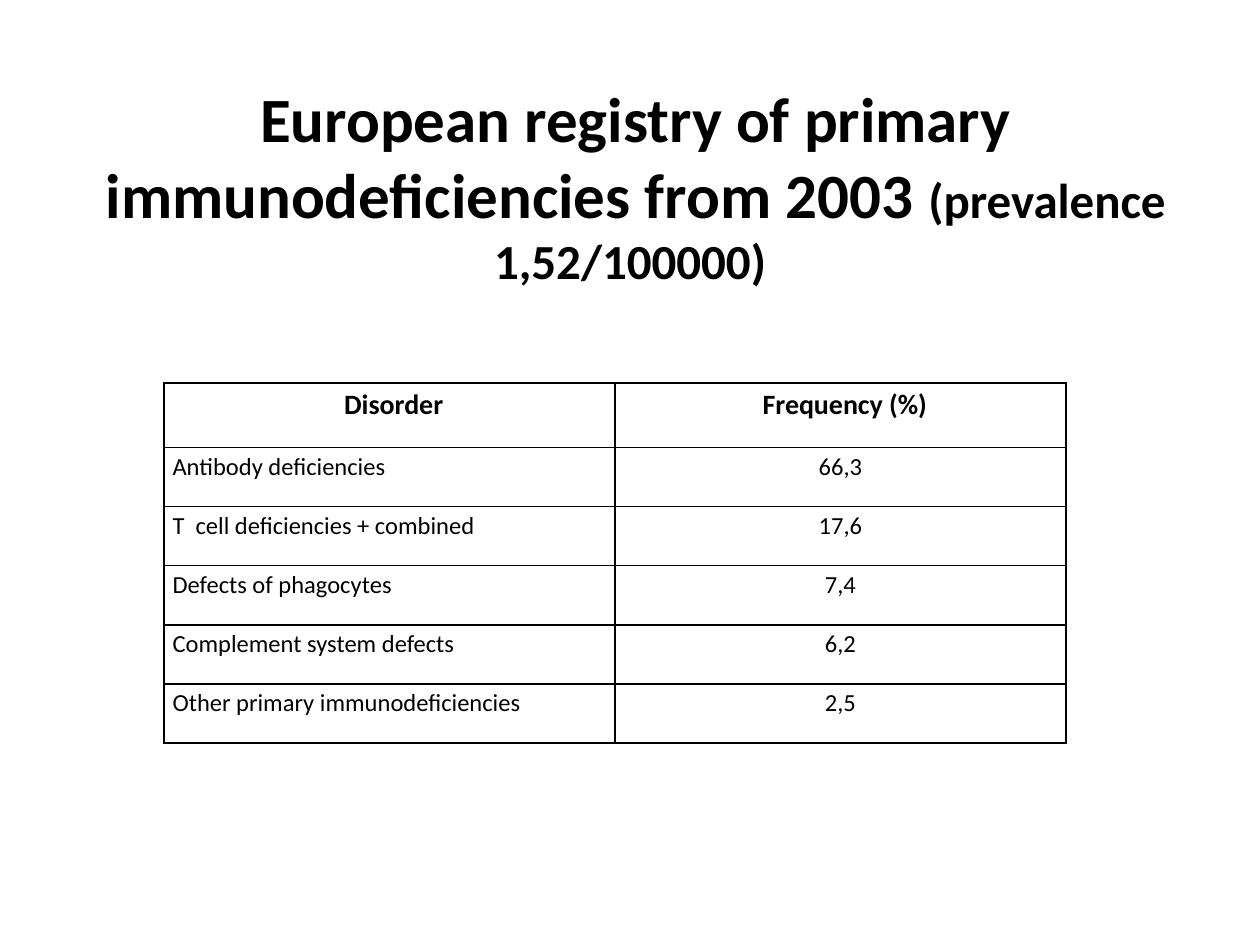
import pptx
import pptx.dml.color
import pptx.enum.dml
import pptx.enum.text
import pptx.oxml
import pptx.oxml.ns
import pptx.util

Inches = pptx.util.Inches
Pt = pptx.util.Pt
Align = pptx.enum.text.PP_ALIGN
Anchor = pptx.enum.text.MSO_ANCHOR

BLACK = pptx.dml.color.RGBColor(0x00, 0x00, 0x00)
WHITE = pptx.dml.color.RGBColor(0xFF, 0xFF, 0xFF)

TITLE_SPANS = [
    ("European registry of primary immunodeficiencies from 2003 ", 36),
    ("(prevalence 1,52/100000) ", 28),
]
HEADINGS = ("Disorder", "Frequency (%)")
DISORDERS = [
    ("Antibody deficiencies", "66,3"),
    ("T  cell deficiencies + combined", "17,6"),
    ("Defects of phagocytes", "7,4"),
    ("Complement system defects", "6,2"),
    ("Other primary immunodeficiencies", "2,5"),
]


class RegistrySlide:
    """Holds the text style and the page that is being filled."""

    font = "Calibri"
    color = BLACK
    border_width = Pt(1)

    def __init__(self, deck):
        self.page = deck.slides.add_slide(deck.slide_layouts[5])
        self.page.background.fill.solid()
        self.page.background.fill.fore_color.rgb = WHITE

    def add_span(self, para, text, size, bold):
        span = para.add_run()
        span.text = text
        span.font.name = self.font
        span.font.size = Pt(size)
        span.font.bold = bold
        span.font.color.rgb = self.color

    def set_title(self, spans, left, top, width, height):
        box = self.page.shapes.title
        box.left, box.top, box.width, box.height = left, top, width, height
        frame = box.text_frame
        frame.word_wrap = True
        frame.auto_size = pptx.enum.text.MSO_AUTO_SIZE.NONE
        frame.vertical_anchor = Anchor.MIDDLE
        para = frame.paragraphs[0]
        para.alignment = Align.CENTER
        for text, size in spans:
            self.add_span(para, text, size, bold=True)

    def add_table(self, rows, left, top, column_width, heights):
        columns = len(rows[0])
        table = self.page.shapes.add_table(
            len(rows), columns, left, top, column_width * columns, sum(heights)
        ).table
        table.horz_banding = False
        for column in table.columns:
            column.width = column_width
        for row_index, texts in enumerate(rows):
            table.rows[row_index].height = heights[row_index]
            for column_index, text in enumerate(texts):
                self.fill_cell(
                    table.cell(row_index, column_index), text,
                    heading=row_index == 0, centered=row_index == 0 or column_index > 0,
                )

    def fill_cell(self, cell, text, heading, centered):
        cell.margin_left = cell.margin_right = Inches(0.05 if heading else 0.07)
        cell.margin_top = cell.margin_bottom = 0
        cell.vertical_anchor = Anchor.TOP
        para = cell.text_frame.paragraphs[0]
        para.alignment = Align.CENTER if centered else Align.LEFT
        para.line_spacing = 1.15
        para.space_after = Pt(10)
        if heading:
            properties = para._p.get_or_add_pPr()
            properties.set("marL", str(Inches(0.07)))
            properties.set("indent", "0")
        self.add_span(para, text, 16 if heading else 14, bold=heading)
        self.add_borders(cell)
        cell.fill.background()

    def add_borders(self, cell):
        properties = cell._tc.get_or_add_tcPr()
        for side in ("lnL", "lnR", "lnT", "lnB"):
            properties.append(pptx.oxml.parse_xml(
                f'<a:{side} {pptx.oxml.ns.nsdecls("a")} w="{self.border_width}">'
                f'<a:solidFill><a:srgbClr val="{self.color}"/></a:solidFill></a:{side}>'
            ))


def main():
    deck = pptx.Presentation()
    deck.slide_width, deck.slide_height = Inches(10), Inches(7.5)
    slide = RegistrySlide(deck)

    # Title with the prevalence in smaller type
    slide.set_title(TITLE_SPANS, Inches(0.28), Inches(0.84), Inches(9.53), Inches(1.25))

    # Frequency of each disorder group
    heights = [Inches(0.51)] + [Inches(0.47)] * len(DISORDERS)
    slide.add_table([HEADINGS] + DISORDERS, Inches(1.3), Inches(3.04), Inches(3.58), heights)

    deck.save("out.pptx")


if __name__ == "__main__":
    main()
